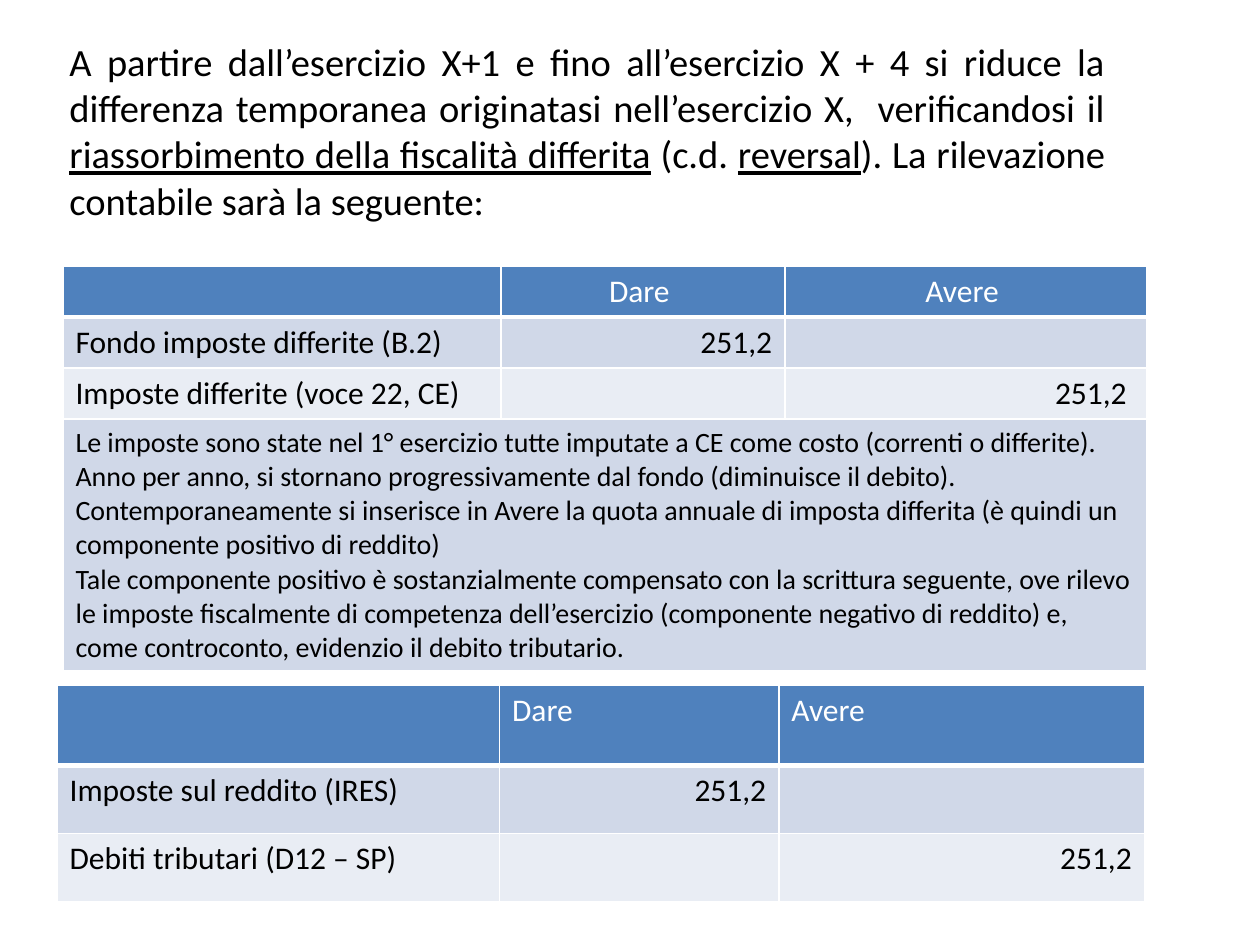
"""Build a slide on the reversal of deferred taxes with its two journal entries."""
from dataclasses import dataclass

from lxml import etree
from pptx import Presentation
from pptx import util as u
from pptx.dml.color import RGBColor
from pptx.enum import text
from pptx.oxml import ns

LEFT, CENTER, RIGHT = text.PP_ALIGN.LEFT, text.PP_ALIGN.CENTER, text.PP_ALIGN.RIGHT


@dataclass(frozen=True)
class Theme:
    font: str = "Calibri"
    white: str = "FFFFFF"
    black: str = "000000"
    header: str = "4F81BD"
    bands: tuple[str, ...] = ("D0D8E8", "E9EDF4")
    title_size: float = 22
    entry_size: float = 18
    note_size: float = 16
    rule: float = 1
    header_rule: float = 3
    title_rule: float = 2


@dataclass(frozen=True)
class JournalEntry:
    left: float
    top: float
    widths: tuple[float, ...]
    heights: tuple[float, ...]
    rows: tuple[tuple[str, ...], ...]
    header_align: text.PP_ALIGN
    note: tuple[str, ...] = ()


THEME = Theme()

INTRO = (
    ("A partire dall’esercizio X+1 e fino all’esercizio X + 4 si riduce la differenza "
     "temporanea originatasi nell’esercizio X,  verificandosi il ", False),
    ("riassorbimento della fiscalità differita", True),
    (" (c.d. ", False),
    ("reversal", True),
    ("). La rilevazione contabile sarà la seguente:", False),
)

ENTRIES = (
    JournalEntry(
        1.27, 5.36, (8.83, 5.72, 7.29), (1.03, 1.03, 1.03, 5.08),
        (("", "Dare ", "Avere "),
         ("Fondo imposte differite (B.2)", "251,2", ""),
         ("Imposte differite (voce 22, CE)", "", "251,2 ")),
        CENTER,
        ("Le imposte sono state nel 1° esercizio tutte imputate a CE come costo (correnti o "
         "differite). Anno per anno, si stornano progressivamente dal fondo (diminuisce il debito).",
         "Contemporaneamente si inserisce in Avere la quota annuale di imposta differita (è quindi "
         "un componente positivo di reddito)",
         "Tale componente positivo è sostanzialmente compensato con la scrittura seguente, ove "
         "rilevo le imposte fiscalmente di competenza dell’esercizio (componente negativo di "
         "reddito) e, come controconto, evidenzio il debito tributario."),
    ),
    JournalEntry(
        1.15, 13.82, (8.92, 5.63, 7.37), (1.61, 1.37, 1.37),
        (("", "Dare", "Avere"),
         ("Imposte sul reddito (IRES)", "251,2", ""),
         ("Debiti tributari (D12 – SP)", "", "251,2")),
        LEFT,
    ),
)


def set_font(font, size: float, color: str, **extra) -> None:
    values = {"name": THEME.font, "size": u.Pt(size), "bold": False, **extra}
    for name, value in values.items():
        setattr(font, name, value)
    font.color.rgb = RGBColor.from_string(color)


def set_borders(cell, bottom: float) -> None:
    properties = cell._tc.get_or_add_tcPr()
    widths = {"lnL": THEME.rule, "lnR": THEME.rule, "lnT": THEME.rule, "lnB": bottom}
    for position, (side, width) in enumerate(widths.items()):
        line = etree.Element(ns.qn(f"a:{side}"), w=str(u.Pt(width)))
        fill = etree.SubElement(line, ns.qn("a:solidFill"))
        etree.SubElement(fill, ns.qn("a:srgbClr"), val=THEME.white)
        properties.insert(position, line)


def write_cell(cell, paragraphs: tuple[str, ...], size: float, row: int,
               align: text.PP_ALIGN) -> None:
    is_header = row == 0
    fill = THEME.header if is_header else THEME.bands[(row - 1) % 2]
    cell.fill.solid()
    cell.fill.fore_color.rgb = RGBColor.from_string(fill)
    set_borders(cell, THEME.header_rule if is_header else THEME.rule)
    cell.text = "\n".join(paragraphs)
    for paragraph in cell.text_frame.paragraphs:
        paragraph.alignment = align
        set_font(paragraph.font, size, THEME.white if is_header else THEME.black)


def add_intro(slide) -> None:
    box = slide.shapes.add_textbox(u.Cm(1.15), u.Cm(0.79), u.Cm(21.38), u.Cm(3.68))
    white = RGBColor.from_string(THEME.white)
    box.fill.solid()
    box.fill.fore_color.rgb = white
    box.line.color.rgb = white
    box.line.width = u.Pt(THEME.title_rule)
    frame = box.text_frame
    frame.word_wrap = True
    frame.vertical_anchor = text.MSO_ANCHOR.MIDDLE
    paragraph = frame.paragraphs[0]
    paragraph.alignment = text.PP_ALIGN.JUSTIFY
    for wording, underlined in INTRO:
        run = paragraph.add_run()
        run.text = wording
        set_font(run.font, THEME.title_size, THEME.black, underline=underlined)


def add_entry(slide, entry: JournalEntry) -> None:
    table = slide.shapes.add_table(
        len(entry.heights), len(entry.widths), u.Cm(entry.left), u.Cm(entry.top),
        u.Cm(sum(entry.widths)), u.Cm(sum(entry.heights))).table
    for column, width in zip(table.columns, entry.widths):
        column.width = u.Cm(width)
    for row, height in zip(table.rows, entry.heights):
        row.height = u.Cm(height)
    for r, wordings in enumerate(entry.rows):
        for c, wording in enumerate(wordings):
            align = entry.header_align if r == 0 else RIGHT if c else LEFT
            write_cell(table.cell(r, c), (wording,), THEME.entry_size, r, align)
    if entry.note:
        last = len(entry.rows)
        note_cell = table.cell(last, 0)
        note_cell.merge(table.cell(last, len(entry.widths) - 1))
        write_cell(note_cell, entry.note, THEME.note_size, last, LEFT)


def main() -> None:
    deck = Presentation()
    deck.slide_width, deck.slide_height = u.Cm(25.4), u.Cm(19.05)
    slide = deck.slides.add_slide(deck.slide_layouts[6])
    add_intro(slide)
    for entry in ENTRIES:
        add_entry(slide, entry)
    deck.save("out.pptx")


if __name__ == "__main__":
    main()
